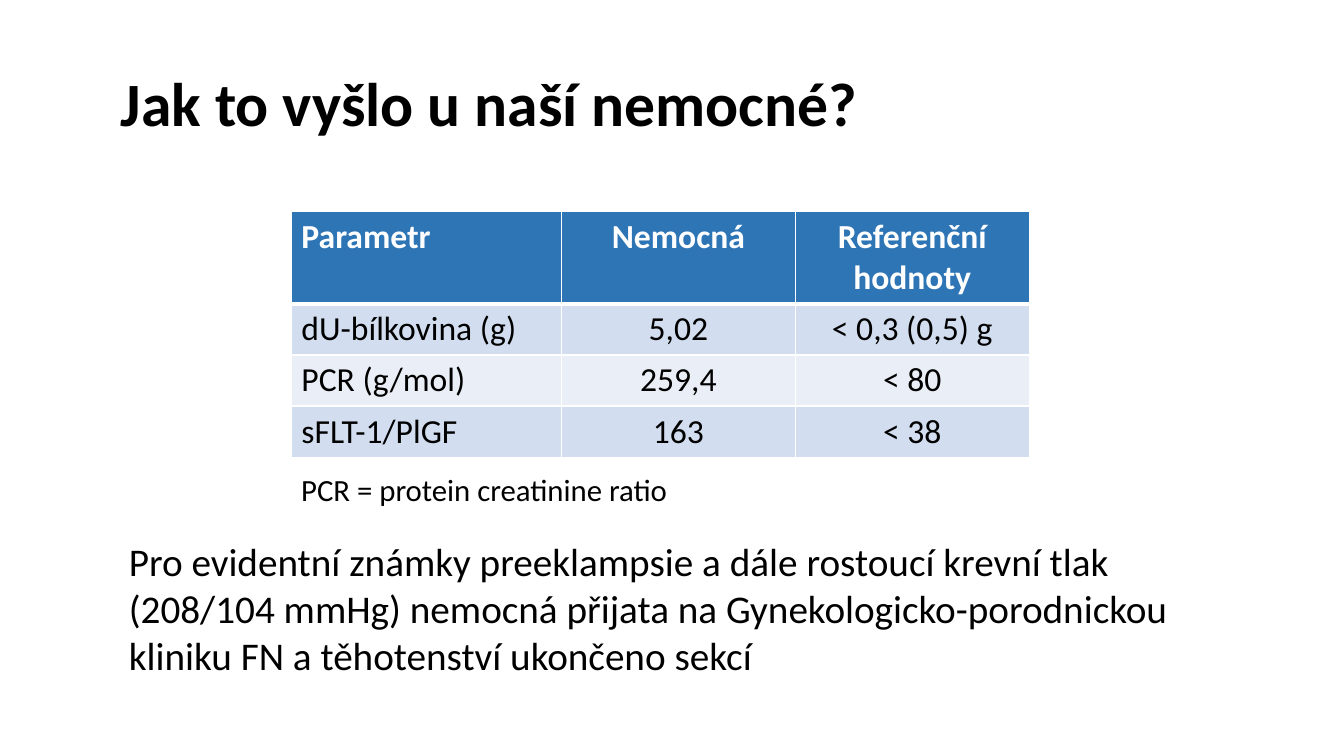
import pptx
import pptx.dml.color
import pptx.enum.text
import pptx.oxml
import pptx.oxml.ns
import pptx.util

COLORS = {"text": "000000", "white": "FFFFFF", "header": "2E75B6",
          "band_dark": "D2DEEF", "band_light": "EAEFF7"}
FONT = "Calibri"
ALIGN = pptx.enum.text.PP_ALIGN
ANCHOR = pptx.enum.text.MSO_ANCHOR
GRID = 100  # columns and rows across the slide


def rgb(name):
    return pptx.dml.color.RGBColor.from_string(COLORS[name])


class Slide:
    def __init__(self, prs):
        self.prs = prs
        self.s = prs.slides.add_slide(prs.slide_layouts[6])

    def x(self, columns):
        return round(self.prs.slide_width * columns / GRID)

    def y(self, rows):
        return round(self.prs.slide_height * rows / GRID)

    def fill_text(self, tf, text, size, color="text", bold=False, **paragraph):
        p = tf.paragraphs[0]
        for name, value in paragraph.items():
            setattr(p, name, value)
        r = p.add_run()
        r.text = text
        style = {"name": FONT, "size": pptx.util.Pt(size), "bold": bold}
        for name, value in style.items():
            setattr(r.font, name, value)
        r.font.color.rgb = rgb(color)

    def text(self, left, top, width, height, text, size,
             anchor=ANCHOR.TOP, **style):
        sp = self.s.shapes.add_textbox(self.x(left), self.y(top),
                                       self.x(width), self.y(height))
        tf = sp.text_frame
        for name, value in {"word_wrap": True, "vertical_anchor": anchor}.items():
            setattr(tf, name, value)
        self.fill_text(tf, text, size, **style)

    def borders(self, cell, top, bottom):
        """Draw white cell edges; top and bottom are widths in points."""
        tc_pr = cell._tc.get_or_add_tcPr()
        for side, width in {"L": 1, "R": 1, "T": top, "B": bottom}.items():
            tc_pr.append(pptx.oxml.parse_xml(
                f'<a:ln{side} {pptx.oxml.ns.nsdecls("a")} w="{pptx.util.Pt(width)}">'
                f'<a:solidFill><a:srgbClr val="{COLORS["white"]}"/></a:solidFill>'
                f'</a:ln{side}>'))

    def table(self, left, top, widths, heights, rows, size):
        table = self.s.shapes.add_table(
            len(rows), len(widths), self.x(left), self.y(top),
            self.x(sum(widths)), self.y(sum(heights))).table
        for column, width in zip(table.columns, widths):
            column.width = self.x(width)
        for i, (row, height) in enumerate(zip(rows, heights)):
            table.rows[i].height = self.y(height)
            header = i == 0
            band = "header" if header else ("band_light", "band_dark")[i % 2]
            for j, value in enumerate(row):
                cell = table.cell(i, j)
                self.borders(cell, 3 if i == 1 else 1, 3 if header else 1)
                cell.fill.solid()
                cell.fill.fore_color.rgb = rgb(band)
                self.fill_text(cell.text_frame, value, size,
                               "white" if header else "text", header,
                               alignment=ALIGN.CENTER if j else ALIGN.LEFT)


def main():
    prs = pptx.Presentation()
    prs.slide_width = pptx.util.Inches(13.33)
    prs.slide_height = pptx.util.Inches(7.5)
    slide = Slide(prs)
    table_left = 21.68

    slide.text(8.25, 5.47, 76, 17.2, "Jak to vyšlo u naší nemocné?", 44,
               ANCHOR.MIDDLE, bold=True, line_spacing=0.9)
    slide.table(table_left, 28, [20.1, 17.4, 17.4], [12.2] + [6.76] * 3, [
        ("Parametr", "Nemocná", "Referenční hodnoty"),
        ("dU-bílkovina (g)", "5,02", "< 0,3 (0,5) g"),
        ("PCR (g/mol)", "259,4", "< 80"),
        ("sFLT-1/PlGF", "163", "< 38"),
    ], 24)
    slide.text(table_left, 61.6, 34.88, 6.3, "PCR = protein creatinine ratio", 22)
    slide.text(8.85, 70.4, 83.65, 20.13,
               "Pro evidentní známky preeklampsie a dále rostoucí krevní tlak "
               "(208/104 mmHg) nemocná přijata na Gynekologicko-porodnickou "
               "kliniku FN a těhotenství ukončeno sekcí", 28)
    prs.save("out.pptx")


if __name__ == "__main__":
    main()
